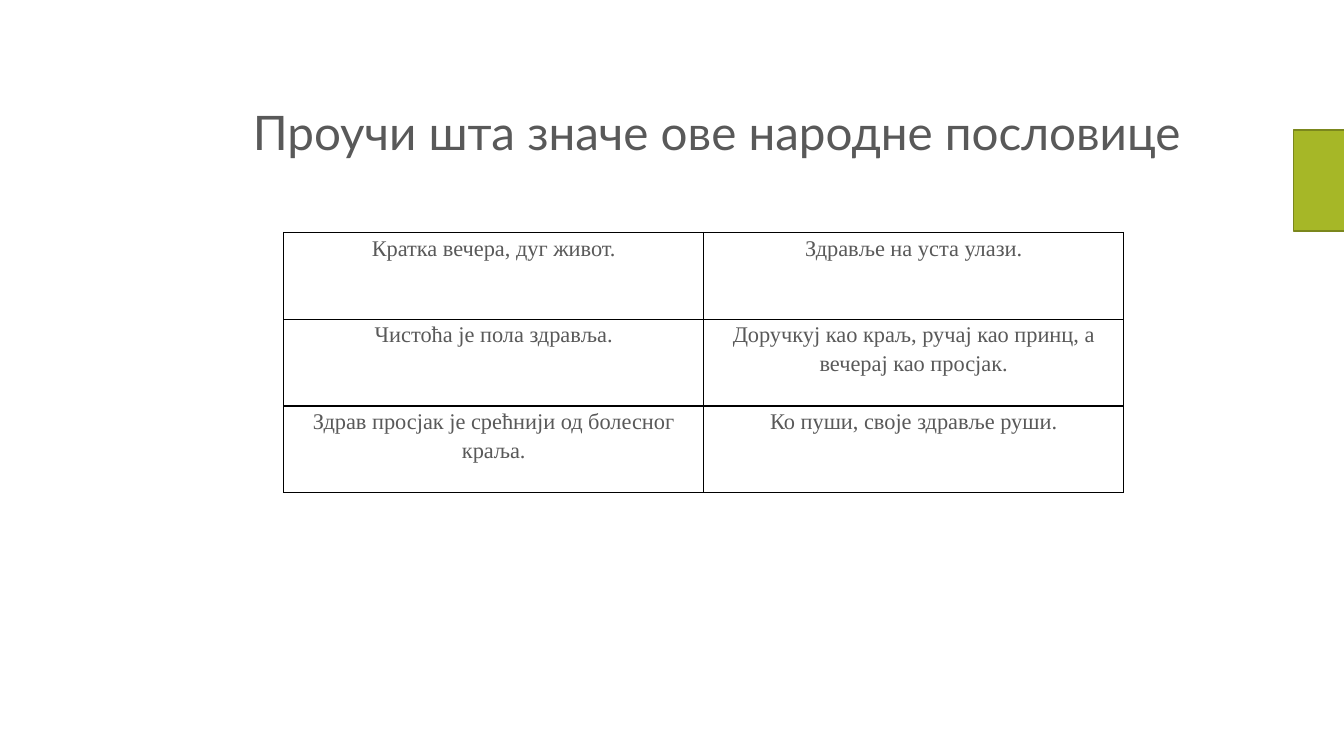
from lxml import etree
from pptx import Presentation
from pptx.dml.color import RGBColor
from pptx.enum import shapes, text
from pptx.oxml import ns
from pptx.util import Pt

BLACK = RGBColor(0x00, 0x00, 0x00)
GRAY = RGBColor(0x59, 0x59, 0x59)
LIME = RGBColor(0xA6, 0xB7, 0x27)
OLIVE = RGBColor(0x7B, 0x87, 0x1D)

PROVERBS = [
    ("Кратка вечера, дуг живот.", "Здравље на уста улази."),
    ("Чистоћа је пола здравља.",
     "Доручкуј као краљ, ручај као принц, а вечерај као просјак."),
    ("Здрав просјак је срећнији од болесног краља.",
     "Ко пуши, своје здравље руши."),
]


def write(frame, words, font, size, color=GRAY, align=text.PP_ALIGN.LEFT,
          spacing=1.0, after=0):
    paragraph = frame.paragraphs[0]
    paragraph.alignment = align
    paragraph.line_spacing = spacing
    paragraph.space_after = Pt(after)
    run = paragraph.add_run()
    run.text = words
    run.font.name = font
    run.font.size = Pt(size)
    run.font.color.rgb = color


def add_borders(cell, color, width):
    properties = cell._tc.get_or_add_tcPr()
    for side in ("lnL", "lnR", "lnT", "lnB"):
        border = etree.SubElement(properties, ns.qn(f"a:{side}"), w=str(Pt(width)))
        fill = etree.SubElement(border, ns.qn("a:solidFill"))
        etree.SubElement(fill, ns.qn("a:srgbClr"), val=str(color))


class ProverbSlide:
    heading_font = "Lato"
    body_font = "Times New Roman"

    def __init__(self, slide):
        self.slide = slide

    def heading(self, words, left, top, width, height):
        box = self.slide.shapes.add_textbox(Pt(left), Pt(top), Pt(width), Pt(height))
        frame = box.text_frame
        frame.word_wrap = True
        frame.vertical_anchor = text.MSO_ANCHOR.BOTTOM
        write(frame, words, self.heading_font, 34, spacing=0.9)

    def grid(self, rows, left, top, column_width, row_height):
        columns = len(rows[0])
        table = self.slide.shapes.add_table(
            len(rows), columns, Pt(left), Pt(top),
            Pt(columns * column_width), Pt(len(rows) * row_height)).table
        table.first_row = False
        table.horz_banding = False
        for row, proverbs in enumerate(rows):
            for column, proverb in enumerate(proverbs):
                self.cell(table.cell(row, column), proverb)

    def cell(self, cell, words):
        cell.margin_left = cell.margin_right = Pt(5)
        cell.margin_top = cell.margin_bottom = 0
        add_borders(cell, BLACK, 1)
        cell.fill.background()
        write(cell.text_frame, words, self.body_font, 16,
              align=text.PP_ALIGN.CENTER, spacing=1.15, after=10)

    def block(self, left, top, width, height):
        block = self.slide.shapes.add_shape(
            shapes.MSO_SHAPE.RECTANGLE, Pt(left), Pt(top), Pt(width), Pt(height))
        block.shadow.inherit = False
        block.fill.solid()
        block.fill.fore_color.rgb = LIME
        block.line.color.rgb = OLIVE
        block.line.width = Pt(1)


def main():
    deck = Presentation()
    deck.slide_width, deck.slide_height = Pt(960), Pt(540)
    page = ProverbSlide(deck.slides.add_slide(deck.slide_layouts[6]))
    page.heading("Проучи шта значе ове народне пословице", 173.5, 23.8, 738, 94.3)
    page.grid(PROVERBS, 202.7, 166, 300, 62)
    page.block(924, 93, 72, 72)
    deck.save("out.pptx")


if __name__ == "__main__":
    main()
